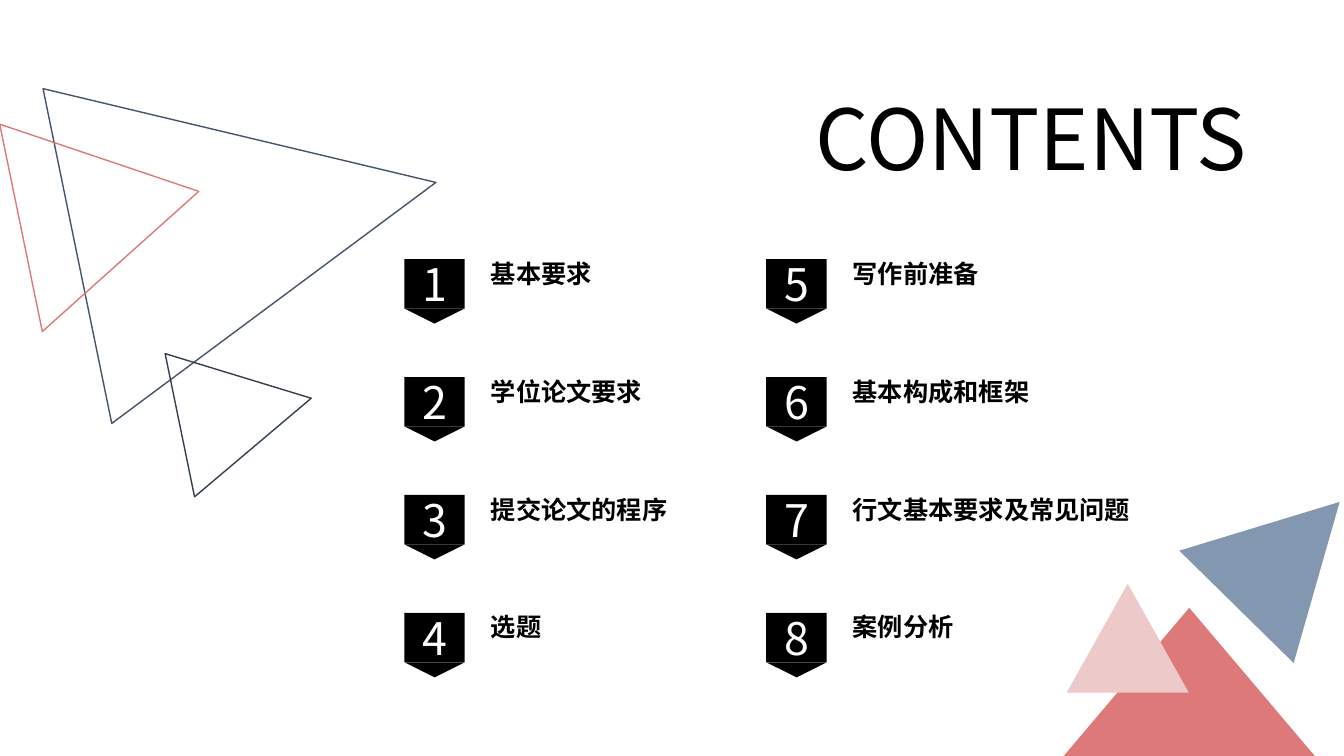
from pptx import Presentation
from pptx.dml.color import RGBColor
from pptx.enum.shapes import MSO_SHAPE
from pptx.enum.text import MSO_ANCHOR, PP_ALIGN
from pptx.oxml.ns import qn
from pptx.util import Inches, Pt

FONT = "Noto Sans CJK JP"
BLACK = RGBColor(0x00, 0x00, 0x00)
WHITE = RGBColor(0xFF, 0xFF, 0xFF)
SLATE = RGBColor(0x44, 0x54, 0x6A)
NAVY = RGBColor(0x33, 0x3F, 0x50)
CORAL = RGBColor(0xDD, 0x79, 0x79)
PINK = RGBColor(0xED, 0xC9, 0xC9)
STEEL = RGBColor(0x84, 0x97, 0xB0)

TOPICS = [
    ["基本要求", "学位论文要求", "提交论文的程序", "选题"],
    ["写作前准备", "基本构成和框架", "行文基本要求及常见问题", "案例分析"],
]


def write_text(shape, text, size, color=BLACK, bold=False, align=PP_ALIGN.LEFT,
               anchor=MSO_ANCHOR.TOP, line_spacing=None):
    """Write one formatted paragraph into a shape."""
    frame = shape.text_frame
    frame.word_wrap = True
    frame.vertical_anchor = anchor
    paragraph = frame.paragraphs[0]
    paragraph.alignment = align
    paragraph.line_spacing = line_spacing
    run = paragraph.add_run()
    run.text = text
    font = run.font
    font.name, font.size, font.bold = FONT, Pt(size), bold
    font.color.rgb = color
    east_asian = font._element.makeelement(qn("a:ea"), {"typeface": FONT})
    font._element.find(qn("a:latin")).addnext(east_asian)


def add_text(slide, box, text, **text_format):
    """Add a text box holding one paragraph."""
    shape = slide.shapes.add_textbox(*map(Inches, box))
    write_text(shape, text, **text_format)


def add_preset(slide, kind, box, fill=None, line=None, rotation=0):
    """Add a flat preset shape with an optional fill or outline."""
    shape = slide.shapes.add_shape(kind, *map(Inches, box))
    shape.shadow.inherit = False
    shape.rotation = rotation
    if fill is None:
        shape.fill.background()
    else:
        shape.fill.solid()
        shape.fill.fore_color.rgb = fill
    if line is None:
        shape.line.fill.background()
    else:
        shape.line.color.rgb = line
        shape.line.width = Pt(1)
    return shape


def add_outlined_triangles(slide, left, top):
    """Draw the three tilted outlines at the upper left."""
    for x, y, width, height, color in [
        (0.81, 0, 3.39, 3.63, SLATE),
        (1.67, 3.06, 1.45, 1.33, NAVY),
        (0, 0.82, 2.1, 1.8, CORAL),
    ]:
        add_preset(slide, MSO_SHAPE.ISOSCELES_TRIANGLE,
                   (left + x, top + y, width, height), line=color, rotation=78.4)


def add_filled_triangles(slide, left, top):
    """Draw the three solid triangles at the lower right."""
    for x, y, width, height, color, rotation in [
        (0, 1.26, 2.49, 1.47, CORAL, 0),
        (0.03, 1.02, 1.21, 1.08, PINK, 0),
        (1.43, 0, 1.59, 1.46, STEEL, 44.5),
    ]:
        add_preset(slide, MSO_SHAPE.ISOSCELES_TRIANGLE,
                   (left + x, top + y, width, height), fill=color, rotation=rotation)


def add_topic(slide, left, top, number, title):
    """Draw a numbered pennant with its topic to the right."""
    badge = add_preset(slide, MSO_SHAPE.RECTANGLE, (left, top, 0.6, 0.49), fill=BLACK)
    write_text(badge, str(number), size=32, color=WHITE,
               align=PP_ALIGN.CENTER, anchor=MSO_ANCHOR.MIDDLE)
    add_preset(slide, MSO_SHAPE.ISOSCELES_TRIANGLE, (left, top + 0.49, 0.6, 0.15),
               fill=BLACK, rotation=180)
    add_text(slide, (left + 0.76, top - 0.15, 2.97, 0.49), title,
             size=18, bold=True, line_spacing=1.3)


def add_topics(slide, left, top):
    """Lay out the numbered topics column by column."""
    for column, titles in enumerate(TOPICS):
        for row, title in enumerate(titles):
            number = column * len(titles) + row + 1
            add_topic(slide, left + column * 3.59, top + row * 1.17, number, title)


def main():
    """Build and save the contents slide."""
    presentation = Presentation()
    presentation.slide_width = Inches(13.33)
    presentation.slide_height = Inches(7.5)
    slide = presentation.slides.add_slide(presentation.slide_layouts[6])
    add_outlined_triangles(slide, 0.04, 0.36)
    add_filled_triangles(slide, 10.55, 4.77)
    add_text(slide, (7.64, 0.81, 5.17, 1.11), "CONTENTS", size=60, align=PP_ALIGN.CENTER)
    add_topics(slide, 4.01, 2.57)
    presentation.save("out.pptx")


if __name__ == "__main__":
    main()
